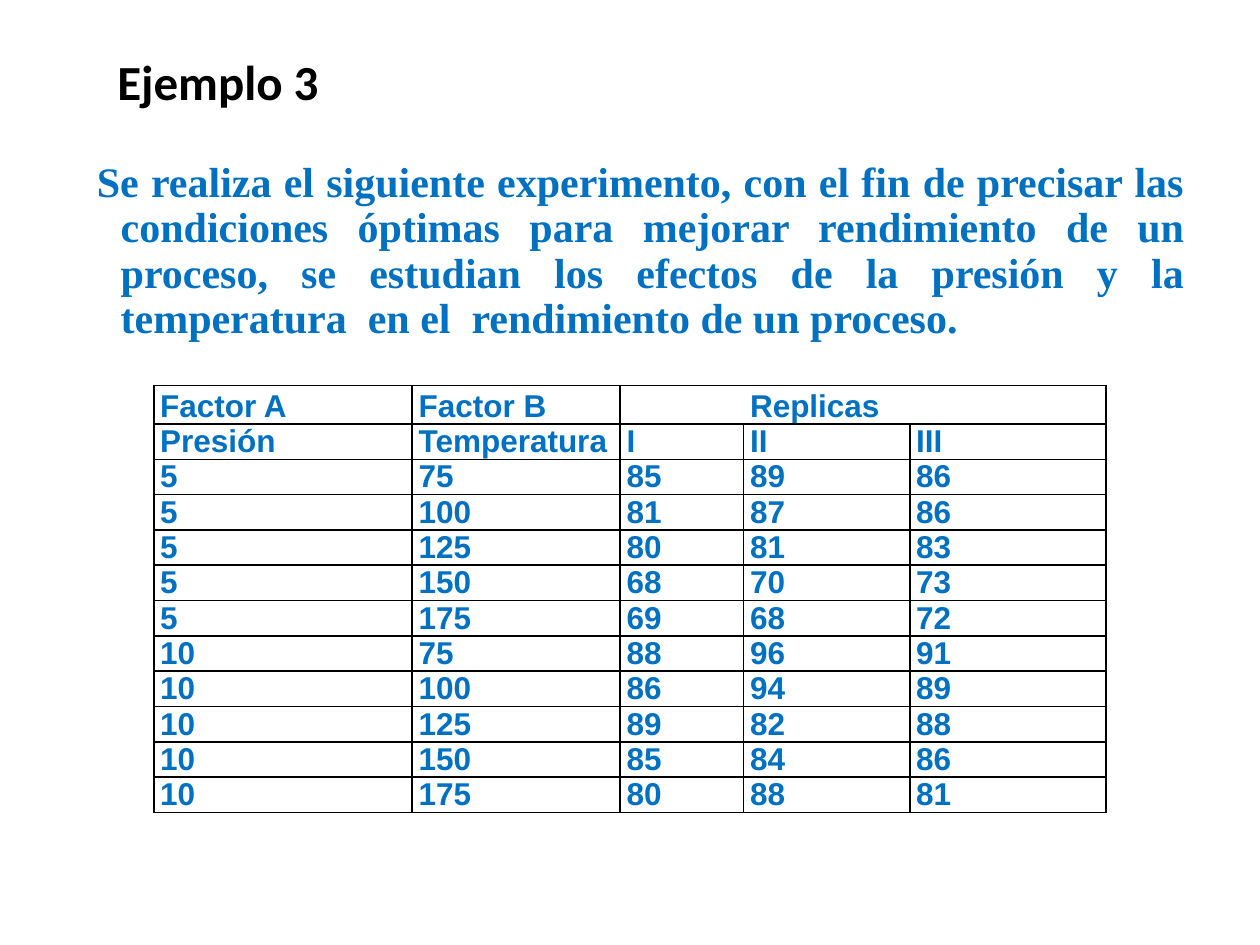
from dataclasses import dataclass

from lxml.etree import SubElement
from pptx import Presentation
from pptx.dml.color import RGBColor
from pptx.enum.text import MSO_ANCHOR, MSO_AUTO_SIZE, PP_ALIGN
from pptx.oxml.ns import qn
from pptx.util import Cm, Pt


@dataclass(frozen=True)
class Theme:
    ink: RGBColor = RGBColor(0x00, 0x00, 0x00)
    accent: RGBColor = RGBColor(0x00, 0x70, 0xC0)
    title_size: int = 28
    body_size: int = 24
    table_size: int = 18
    border: int = 1


THEME = Theme()

TITLE = "Ejemplo 3"
STATEMENT = (
    "Se realiza el siguiente experimento, con el fin de precisar las condiciones "
    "óptimas para mejorar rendimiento de un proceso, se estudian los efectos de la "
    "presión y la temperatura  en el  rendimiento de un proceso."
)
HEADINGS = [
    ["Factor A", "Factor B", "", "Replicas", ""],
    ["Presión", "Temperatura", "I", "II", "III"],
]
TEMPERATURES = [75, 100, 125, 150, 175]
# Three replicas for each temperature, grouped by pressure
YIELDS = {
    5: [(85, 89, 86), (81, 87, 86), (80, 81, 83), (68, 70, 73), (69, 68, 72)],
    10: [(88, 96, 91), (86, 94, 89), (89, 82, 88), (85, 84, 86), (80, 88, 81)],
}
COLUMN_WIDTHS = [5.21, 4.19, 2.49, 3.35, 3.96]
ROW_HEIGHT = 0.71


def apply(target, values):
    for name, value in values.items():
        setattr(target, name, value)


def write(para, text, face, size, color):
    span = para.add_run()
    span.text = text
    apply(span.font, {"name": face, "size": Pt(size), "bold": True})
    span.font.color.rgb = color


def place(shape, box):
    apply(shape, dict(zip(("left", "top", "width", "height"), map(Cm, box))))


def add_title(page, box):
    title = page.shapes.title
    place(title, box)
    apply(title.text_frame, {"vertical_anchor": MSO_ANCHOR.MIDDLE,
                             "auto_size": MSO_AUTO_SIZE.NONE})
    para = title.text_frame.paragraphs[0]
    apply(para, {"alignment": PP_ALIGN.LEFT, "line_spacing": 0.9})
    write(para, TITLE, "Calibri", THEME.title_size, THEME.ink)


def add_statement(page, box):
    body = page.placeholders[1]
    place(body, box)
    body.text_frame.auto_size = MSO_AUTO_SIZE.NONE
    para = body.text_frame.paragraphs[0]
    apply(para, {"alignment": PP_ALIGN.JUSTIFY, "line_spacing": 0.9,
                 "space_before": Pt(7.5)})
    write(para, STATEMENT, "Times New Roman", THEME.body_size, THEME.accent)
    # Hanging indent without a bullet
    properties = para._p.get_or_add_pPr()
    properties.set("marL", str(Cm(0.48)))
    properties.set("indent", str(Cm(-0.48)))
    SubElement(properties, qn("a:buNone"))


def set_borders(cell, hidden):
    properties = cell._tc.get_or_add_tcPr()
    for position, side in enumerate("LRTB"):
        line = SubElement(properties, qn(f"a:ln{side}"), w=str(Pt(THEME.border)))
        if side in hidden:
            SubElement(line, qn("a:noFill"))
        else:
            fill = SubElement(line, qn("a:solidFill"))
            SubElement(fill, qn("a:srgbClr"), val=str(THEME.ink))
        properties.insert(position, line)


def add_results(page, left, top):
    rows = HEADINGS + [
        [pressure, temperature, *replicas]
        for pressure, groups in YIELDS.items()
        for temperature, replicas in zip(TEMPERATURES, groups)
    ]
    frame = page.shapes.add_table(
        len(rows), len(COLUMN_WIDTHS), Cm(left), Cm(top),
        Cm(sum(COLUMN_WIDTHS)), Cm(ROW_HEIGHT * len(rows)))
    table = frame.table
    apply(table, {"first_row": False, "horz_banding": False})
    for column, width in zip(table.columns, COLUMN_WIDTHS):
        column.width = Cm(width)

    # The replica heading spans three cells with no lines between them
    open_sides = {(0, 2): "R", (0, 3): "LR", (0, 4): "L"}
    for r, values in enumerate(rows):
        table.rows[r].height = Cm(ROW_HEIGHT)
        for c, value in enumerate(values):
            cell = table.cell(r, c)
            apply(cell, {"margin_left": Cm(0.13), "margin_right": Cm(0.13),
                         "margin_top": 0, "margin_bottom": 0,
                         "vertical_anchor": MSO_ANCHOR.BOTTOM})
            cell.fill.background()
            set_borders(cell, open_sides.get((r, c), ""))
            para = cell.text_frame.paragraphs[0]
            if r >= len(HEADINGS):
                para.alignment = PP_ALIGN.JUSTIFY
            if value != "":
                write(para, str(value), "Arial", THEME.table_size, THEME.accent)


def main():
    deck = Presentation()
    apply(deck, {"slide_width": Cm(25.4), "slide_height": Cm(19.05)})
    page = deck.slides.add_slide(deck.slide_layouts[1])
    add_title(page, (2.11, 0.53, 12.5, 2.34))
    add_statement(page, (1.7, 3.12, 22.43, 4.65))
    add_results(page, 3.1, 7.77)
    deck.save("out.pptx")


if __name__ == "__main__":
    main()
